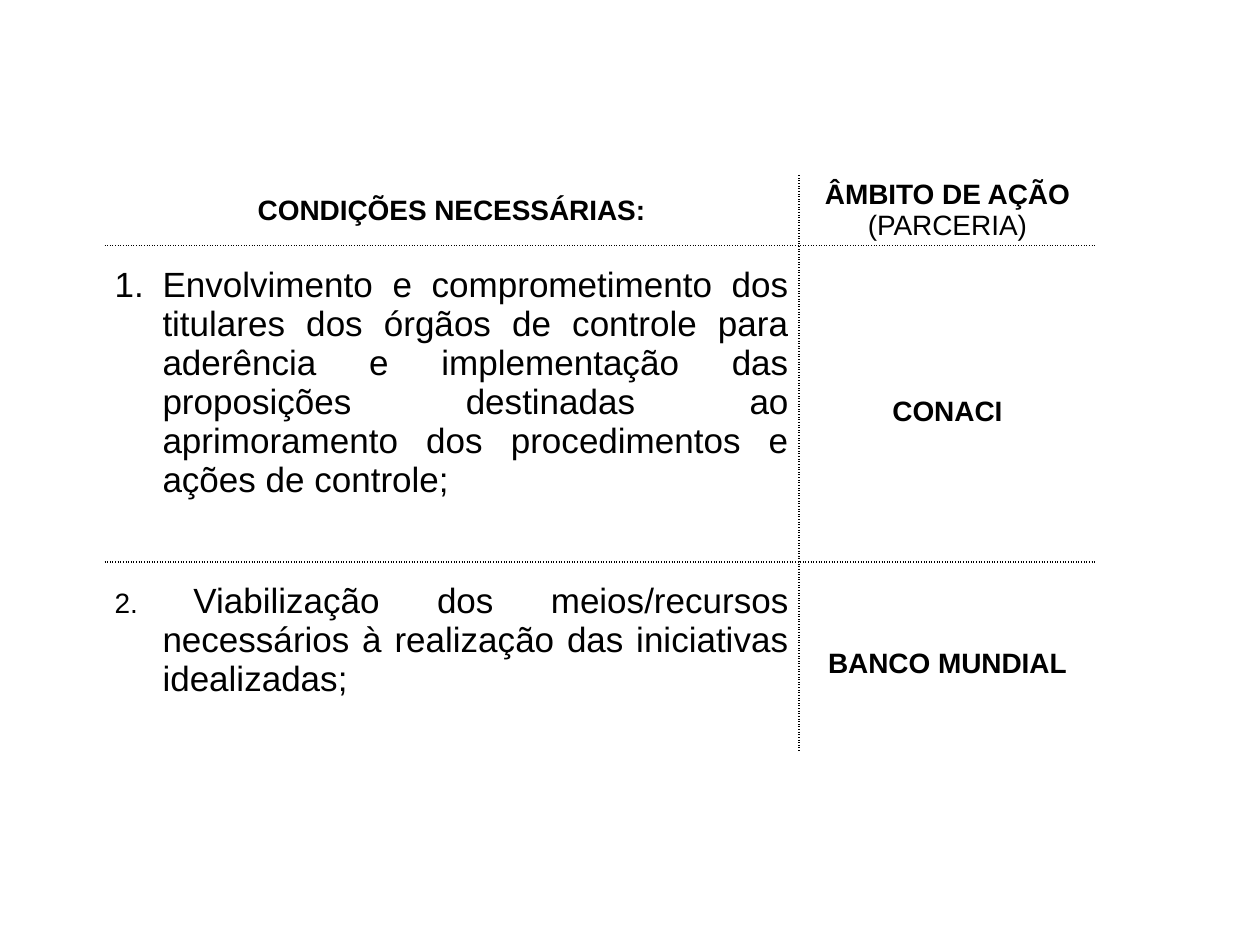
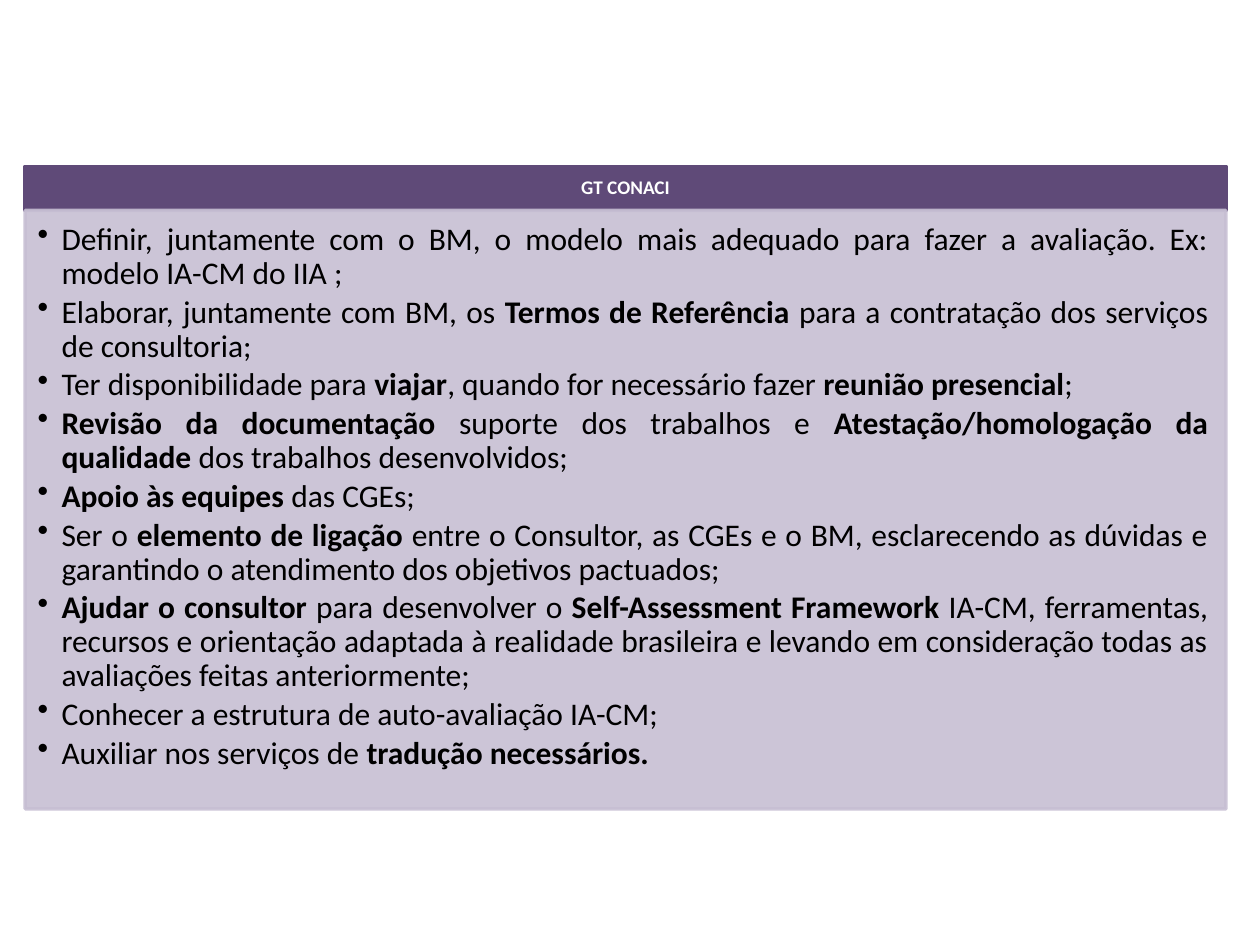
from lxml import etree
from pptx import Presentation
from pptx.dml.color import RGBColor
from pptx.enum.shapes import MSO_SHAPE
from pptx.enum.text import MSO_ANCHOR, PP_ALIGN
from pptx.oxml.ns import qn
from pptx.util import Inches, Pt

RECTANGLE = MSO_SHAPE.RECTANGLE
TOP, MIDDLE = MSO_ANCHOR.TOP, MSO_ANCHOR.MIDDLE
CENTER, JUSTIFY = PP_ALIGN.CENTER, PP_ALIGN.JUSTIFY
BLACK, WHITE, PURPLE, LILAC = "000000", "FFFFFF", "5F4A78", "C7BFD3"

COLUMNS = [5.51, 2.36]
ROWS = [0.56, 2.51, 1.5]
CONDITIONS = [
    ([("Envolvimento e comprometimento dos titulares dos órgãos de controle para "
       "aderência e implementação das proposições destinadas ao aprimoramento dos "
       "procedimentos e ações de controle;", 20, False)], "CONACI", True),
    ([("2. ", 16, False),
      ("Viabilização dos meios/recursos necessários à realização das iniciativas "
       "idealizadas;", 20, False)], "BANCO MUNDIAL", False),
]
DUTIES = [
    [("Definir, juntamente com o BM, o modelo mais adequado para fazer a avaliação. "
      "Ex: modelo IA-CM do IIA ;", False)],
    [("Elaborar, juntamente com BM, os ", False), ("Termos de Referência ", True),
     ("para a contratação dos serviços de consultoria;", False)],
    [("Ter disponibilidade para ", False), ("viajar", True),
     (", quando for necessário fazer ", False), ("reunião presencial", True), (";", False)],
    [("Revisão da documentação ", True), ("suporte dos trabalhos e ", False),
     ("Atestação/homologação da qualidade ", True), ("dos trabalhos desenvolvidos;", False)],
    [("Apoio às equipes ", True), ("das CGEs;", False)],
    [("Ser o ", False), ("elemento de ligação ", True),
     ("entre o Consultor, as CGEs e o BM, esclarecendo as dúvidas e garantindo o "
      "atendimento dos objetivos pactuados;", False)],
    [("Ajudar o consultor ", True), ("para desenvolver o ", False),
     ("Self-Assessment Framework", True),
     (" IA-CM, ferramentas, recursos e orientação adaptada à realidade brasileira e "
      "levando em consideração todas as avaliações feitas anteriormente;", False)],
    [("Conhecer a estrutura de auto-avaliação IA-CM;", False)],
    [("Auxiliar nos serviços de ", False), ("tradução necessários.", True)],
]


def rgb(value):
    """Turn a hex string into a colour."""
    return RGBColor.from_string(value)


def write(paragraph, runs, align, face, color=BLACK, spacing=1.0):
    """Fill a paragraph with (text, size, bold) runs."""
    paragraph.alignment = align
    paragraph.line_spacing = spacing
    for text, size, bold in runs:
        run = paragraph.add_run()
        run.text = text
        run.font.size, run.font.bold, run.font.name = Pt(size), bold, face
        run.font.color.rgb = rgb(color)


def hang(paragraph, indent, tag=None, **attributes):
    """Give a paragraph a hanging indent and an optional bullet or number."""
    properties = paragraph._p.get_or_add_pPr()
    properties.set("marL", str(Inches(indent)))
    properties.set("indent", str(-Inches(indent)))
    if tag:
        etree.SubElement(properties, qn(tag), attributes)


def set_borders(cell, dotted):
    """Dot the named sides of a cell and clear the others."""
    properties = cell._tc.get_or_add_tcPr()
    for position, side in enumerate("LRTB"):
        line = etree.Element(qn(f"a:ln{side}"), w=str(Pt(1)))
        if side in dotted:
            fill = etree.SubElement(line, qn("a:solidFill"))
            etree.SubElement(fill, qn("a:srgbClr"), val=BLACK)
            etree.SubElement(line, qn("a:prstDash"), val="sysDot")
        else:
            etree.SubElement(line, qn("a:noFill"))
        properties.insert(position, line)


def add_conditions(slide, left, top):
    """Place the table of conditions and who acts on them."""
    table = slide.shapes.add_table(
        len(ROWS), len(COLUMNS), Inches(left), Inches(top),
        Inches(sum(COLUMNS)), Inches(sum(ROWS))).table
    table.first_row = table.horz_banding = False
    for column, width in zip(table.columns, COLUMNS):
        column.width = Inches(width)
    for r, height in enumerate(ROWS):
        table.rows[r].height = Inches(height)
        for c in range(len(COLUMNS)):
            cell = table.cell(r, c)
            cell.fill.background()
            cell.margin_left = cell.margin_right = Inches(0.08)
            cell.margin_top = cell.margin_bottom = 0
            cell.vertical_anchor = TOP if r and not c else MIDDLE
            inner = ("T" if r else "") + ("B" if r < len(ROWS) - 1 else "")
            set_borders(cell, inner + ("L" if c else "R"))

    def first(r, c):
        return table.cell(r, c).text_frame.paragraphs[0]

    write(first(0, 0), [("CONDIÇÕES NECESSÁRIAS:", 16, True)], CENTER, "Arial")
    write(first(0, 1), [("ÂMBITO DE AÇÃO ", 16, True), ("(PARCERIA)", 16, False)],
          CENTER, "Arial")
    for r, (condition, partner, numbered) in enumerate(CONDITIONS, 1):
        table.cell(r, 0).margin_top = Inches(0.16)
        if numbered:
            hang(first(r, 0), 0.38, "a:buAutoNum", type="arabicPeriod")
        else:
            hang(first(r, 0), 0.38)
        write(first(r, 0), condition, JUSTIFY, "Arial")
        write(first(r, 1), [(partner, 16, True)], CENTER, "Arial", spacing=1.5)


def add_band(slide, box, color, margins, anchor, opacity=100):
    """Place a filled band and return its text frame."""
    band = slide.shapes.add_shape(RECTANGLE, *map(Inches, box))
    band.shadow.inherit = False
    band.fill.solid()
    band.fill.fore_color.rgb = band.line.color.rgb = rgb(color)
    band.line.width = Pt(2)
    if opacity < 100:
        for tint in band._element.spPr.iter(qn("a:srgbClr")):
            etree.SubElement(tint, qn("a:alpha"), val=str(opacity * 1000))
    frame = band.text_frame
    frame.word_wrap = True
    frame.vertical_anchor = anchor
    (frame.margin_left, frame.margin_top,
     frame.margin_right, frame.margin_bottom) = map(Inches, margins)
    return frame


def add_duties(slide, left, top, width, height):
    """Place the group's heading band above its list of duties."""
    heading_height = 0.35
    heading = add_band(slide, (left, top, width, heading_height), PURPLE,
                       (0.09, 0.05, 0.09, 0.05), MIDDLE)
    write(heading.paragraphs[0], [("GT CONACI", 11, True)], CENTER, "Calibri", WHITE, 0.9)
    duties = add_band(
        slide, (left, top + heading_height, width, height - heading_height), LILAC,
        (0.1, 0.1, 0.14, 0.16), TOP, opacity=90)
    for i, duty in enumerate(DUTIES):
        paragraph = duties.add_paragraph() if i else duties.paragraphs[0]
        hang(paragraph, 0.19, "a:buChar", char="•")
        write(paragraph, [(text, 18, bold) for text, bold in duty],
              JUSTIFY, "Calibri", spacing=0.9)
        paragraph.space_after = Pt(2.7)


def main():
    """Build both slides and save them."""
    deck = Presentation()
    deck.slide_width, deck.slide_height = Inches(10), Inches(7.5)
    blank = deck.slide_layouts[6]
    add_conditions(deck.slides.add_slide(blank), 0.83, 1.39)
    add_duties(deck.slides.add_slide(blank), 0.2, 1.32, 9.53, 5.1)
    deck.save("out.pptx")


if __name__ == "__main__":
    main()
